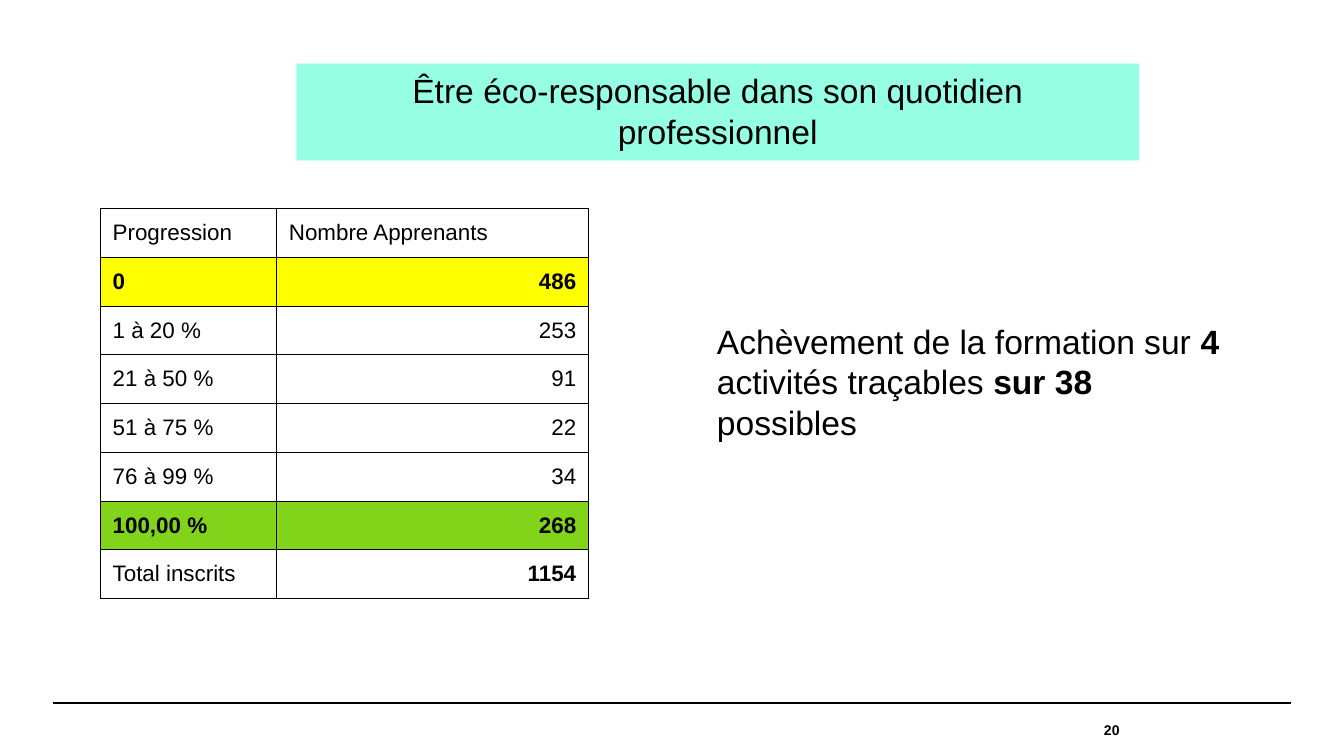
from pptx import Presentation
from pptx.dml.color import RGBColor
from pptx.enum.shapes import MSO_CONNECTOR
from pptx.enum.text import MSO_ANCHOR as Anchor, MSO_AUTO_SIZE as AutoSize, PP_ALIGN as Align
from pptx.oxml.ns import qn
from pptx.util import Cm, Pt
from lxml.etree import SubElement

COLORS = {"black": "000000", "mint": "96FFE3", "yellow": "FFFF00", "green": "81D41A"}


def add_span(para, text, size, bold=False):
    span = para.add_run()
    span.text = text
    span.font.name = "Arial"
    span.font.size = Pt(size)
    span.font.bold = bold
    span.font.color.rgb = RGBColor.from_string(COLORS["black"])


def add_borders(cell):
    """Draw a thin black line on all four sides; call before filling the cell."""
    props = cell._tc.get_or_add_tcPr()
    for side in ("a:lnL", "a:lnR", "a:lnT", "a:lnB"):
        line = SubElement(props, qn(side), w=str(Pt(0.38)))
        fill = SubElement(line, qn("a:solidFill"))
        SubElement(fill, qn("a:srgbClr"), val=COLORS["black"])


deck = Presentation()
deck.slide_width, deck.slide_height = Cm(25.4), Cm(14.28)
page = deck.slides.add_slide(deck.slide_layouts[5])

# Footer rule and page number
rule = page.shapes.add_connector(
    MSO_CONNECTOR.STRAIGHT, Cm(1), Cm(13.28), Cm(24.4), Cm(13.28))
rule.line.color.rgb = RGBColor.from_string(COLORS["black"])
rule.line.width = Pt(0.8)
SubElement(rule._element.spPr, qn("a:effectLst"))

number_box = page.shapes.add_textbox(Cm(17.4), Cm(13.28), Cm(3.76), Cm(1))
frame = number_box.text_frame
frame.word_wrap = True
frame.vertical_anchor = Anchor.MIDDLE
frame.margin_left = frame.margin_right = frame.margin_top = frame.margin_bottom = 0
frame.paragraphs[0].alignment = Align.RIGHT
add_span(frame.paragraphs[0], "20", 7.5, True)

# Title band
title = page.shapes.title
title.left, title.top, title.width, title.height = Cm(5.6), Cm(1.2), Cm(15.93), Cm(1.83)
title.fill.solid()
title.fill.fore_color.rgb = RGBColor.from_string(COLORS["mint"])
frame = title.text_frame
frame.auto_size = AutoSize.NONE
frame.vertical_anchor = Anchor.TOP
frame.paragraphs[0].alignment = Align.CENTER
add_span(frame.paragraphs[0], "Être éco-responsable dans son quotidien professionnel", 18)

# Learners by progress: label, count, row fill
rows = [
    ("Progression", "Nombre Apprenants", None),
    ("0", "486", "yellow"),
    ("1 à 20 %", "253", None),
    ("21 à 50 %", "91", None),
    ("51 à 75 %", "22", None),
    ("76 à 99 %", "34", None),
    ("100,00 %", "268", "green"),
    ("Total inscrits", "1154", None),
]
row_height = Cm(0.92)
table = page.shapes.add_table(
    len(rows), 2, Cm(1.9), Cm(3.94), Cm(9.22), row_height * len(rows)).table
table.horz_banding = False
table.first_row = False
table.columns[0].width, table.columns[1].width = Cm(3.33), Cm(5.89)

for r, (label, count, fill) in enumerate(rows):
    table.rows[r].height = row_height
    for c, text in enumerate((label, count)):
        cell = table.cell(r, c)
        add_borders(cell)
        if fill:
            cell.fill.solid()
            cell.fill.fore_color.rgb = RGBColor.from_string(COLORS[fill])
        else:
            cell.fill.background()
        cell.vertical_anchor = Anchor.MIDDLE
        cell.margin_left = cell.margin_right = Cm(0.23)
        cell.margin_top = cell.margin_bottom = Cm(0.1)
        para = cell.text_frame.paragraphs[0]
        para.alignment = Align.RIGHT if r and c else Align.LEFT
        is_total = text == rows[-1][1]
        add_span(para, text, 12, bool(fill) or is_total)

# Completion rule
completion_box = page.shapes.add_textbox(Cm(13.3), Cm(5.94), Cm(10), Cm(2.57))
frame = completion_box.text_frame
frame.word_wrap = True
for text, bold in [
    ("Achèvement de la formation sur ", False),
    ("4", True),
    (" activités traçables ", False),
    ("sur 38 ", True),
    ("possibles", False),
]:
    add_span(frame.paragraphs[0], text, 18, bold)

deck.save("out.pptx")
